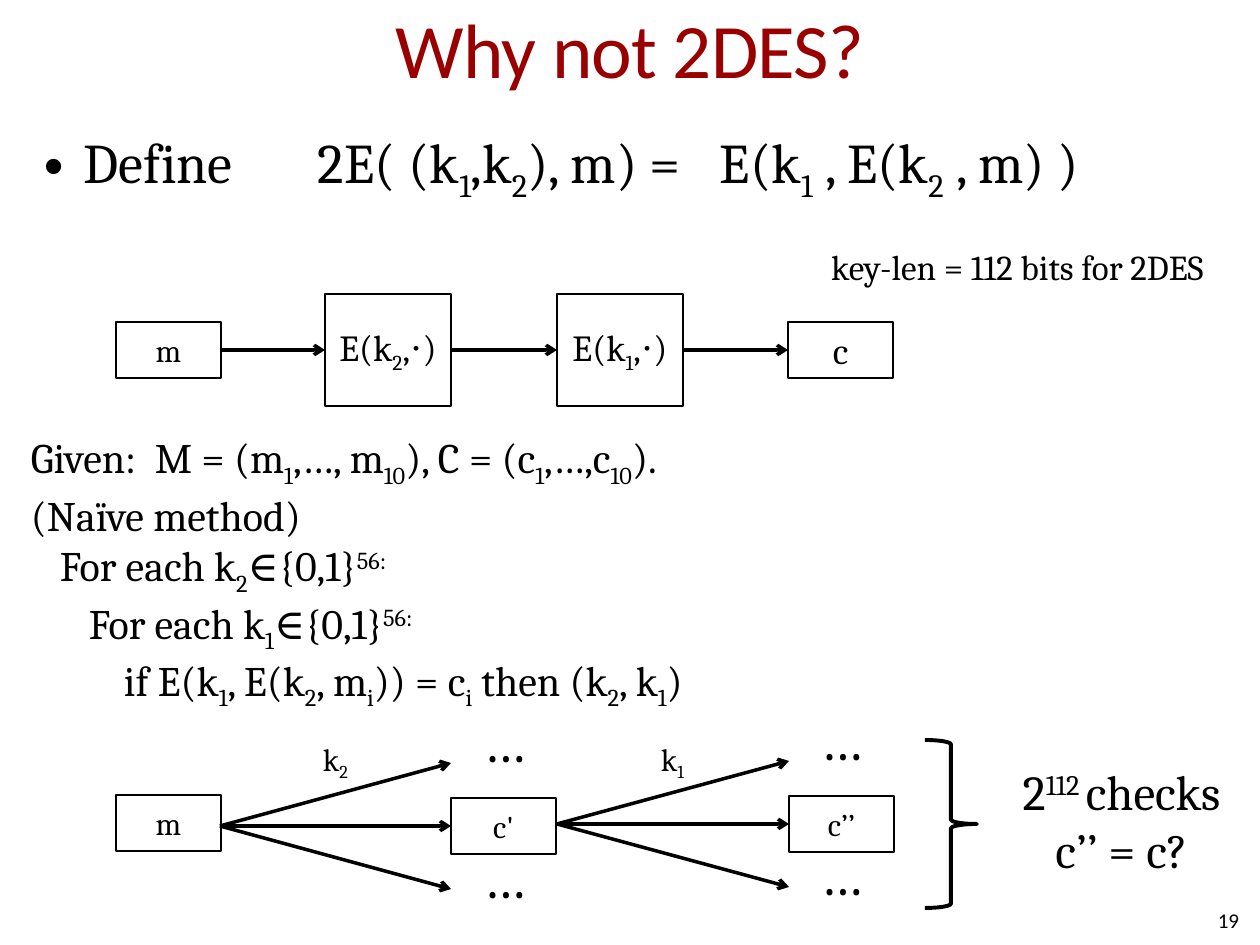
from lxml import etree
from pptx import Presentation
from pptx import util as u
from pptx.dml.color import RGBColor
from pptx.enum import shapes, text
from pptx.oxml.ns import qn

PX = 914400 / 126
BLACK = RGBColor(0x00, 0x00, 0x00)
WHITE = RGBColor(0xFF, 0xFF, 0xFF)
DARK_RED = RGBColor(0x99, 0x00, 0x00)
BASELINES = {"_": "-25000", "^": "30000"}
LEFT, CENTER, RIGHT = text.PP_ALIGN.LEFT, text.PP_ALIGN.CENTER, text.PP_ALIGN.RIGHT
TOP, MIDDLE = text.MSO_ANCHOR.TOP, text.MSO_ANCHOR.MIDDLE

prs = Presentation()
prs.slide_width, prs.slide_height = u.Inches(10), u.Inches(7.5)
s = prs.slides.add_slide(prs.slide_layouts[6])


def add_text(at, lines, size, align=LEFT, anchor=TOP, inset=(0, 0),
             font="Cambria", color=BLACK, boxed=False):
    """Write lines whose |-separated parts are subscript after _ and superscript after ^."""
    at = [round(v * PX) for v in at]
    if boxed:
        sp = s.shapes.add_shape(shapes.MSO_SHAPE.RECTANGLE, *at)
        sp.shadow.inherit = False
        sp.fill.solid()
        sp.fill.fore_color.rgb = WHITE
        sp.line.color.rgb = BLACK
        sp.line.width = u.Pt(0.75)
    else:
        sp = s.shapes.add_textbox(*at)
    tf = sp.text_frame
    tf.word_wrap = True
    tf.vertical_anchor = anchor
    tf.margin_left = tf.margin_right = round(inset[0] * PX)
    tf.margin_top = tf.margin_bottom = round(inset[1] * PX)
    for i, line in enumerate(lines):
        p = tf.paragraphs[0] if i == 0 else tf.add_paragraph()
        p.alignment = align
        for part in line.split("|"):
            r = p.add_run()
            r.text = part[1:] if part[0] in BASELINES else part
            r.font.name, r.font.size, r.font.color.rgb = font, u.Pt(size), color
            if part[0] in BASELINES:
                r.font._element.set("baseline", BASELINES[part[0]])
    return tf


def add_arrow(x1, y1, x2, y2):
    c = s.shapes.add_connector(shapes.MSO_CONNECTOR.STRAIGHT,
                               *[round(v * PX) for v in (x1, y1, x2, y2)])
    c.line.color.rgb = BLACK
    c.line.width = u.Pt(2)
    etree.SubElement(c.line._get_or_add_ln(), qn("a:tailEnd"), type="arrow")
    etree.SubElement(c._element.spPr, qn("a:effectLst"))


# Title and definition
tf = add_text((63, -31, 1134, 157), ["Why not 2DES?"], 44, CENTER, MIDDLE, (0, 6),
              "Calibri", DARK_RED)
tf.paragraphs[0].runs[0].font._element.set("spc", "-50")

tf = add_text((31, 122, 1197, 90),
              ["Define\t2E( (k|_1|,k|_2|), m) =\tE(k|_1| , E(k|_2| , m) )"],
              32, inset=(13, 6))
pPr = tf.paragraphs[0]._p.get_or_add_pPr()
pPr.set("marL", str(round(40 * PX)))
pPr.set("indent", str(round(-40 * PX)))
etree.SubElement(pPr, qn("a:buFont"), typeface="Arial")
etree.SubElement(pPr, qn("a:buChar"), char="•")
tabs = etree.SubElement(pPr, qn("a:tabLst"))
for stop in (274, 676):
    etree.SubElement(tabs, qn("a:tab"), pos=str(round(stop * PX)), algn="l")

add_text((818, 239, 437, 56), ["key-len = 112 bits for 2DES"], 20, inset=(13, 6))

# Double encryption chain
CHAIN_Y = 350
for x, w, h, label, size in [(116, 105, 56, "m", 18), (325, 126, 112, "E(k|_2|,⋅)", 21),
                             (557, 126, 112, "E(k|_1|,⋅)", 21), (788, 105, 56, "c", 21)]:
    add_text((x, CHAIN_Y - h / 2, w, h), [label], size, CENTER, MIDDLE, (13, 6), boxed=True)
for x1, x2 in [(220, 325), (451, 557), (683, 788)]:
    add_arrow(x1, CHAIN_Y, x2, CHAIN_Y)

# Naive search
tf = add_text((31, 432, 1071, 254), [
    "Given:\tM = (m|_1|,…, m|_10|), C = (c|_1|,…,c|_10|).",
    "(Naïve method)",
    "For each k|_2|∈{0,1}|^56:",
    "For each k|_1|∈{0,1}|^56:",
    "if E(k|_1|, E(k|_2|, m|_i|)) = c|_i| then (k|_2|, k|_1|)",
], 24)
for p, indent in zip(tf.paragraphs, (0, 0, 29, 58, 93)):
    p._p.get_or_add_pPr().set("marL", str(round(indent * PX)))
tabs = etree.SubElement(tf.paragraphs[0]._p.get_or_add_pPr(), qn("a:tabLst"))
etree.SubElement(tabs, qn("a:tab"), pos=str(round(124 * PX)), algn="l")

# Search tree
for x, y, label in [(116, 795, "m"), (451, 798, "c'"), (789, 796, "c’’")]:
    add_text((x, y, 105, 56), [label], 18, CENTER, MIDDLE, (13, 6), boxed=True)
for x1, x2, y, key, key_x in [(220, 451, 826, "k|_2", 283), (557, 789, 824, "k|_1", 620)]:
    for dy in (-63, 63, 0):
        add_arrow(x1, y, x2, y + dy)
    for dy in (-120, 16):
        add_text((x2 + 32, y + dy, 105, 68), ["…"], 32)
    add_text((key_x, 733, 105, 56), [key], 18, CENTER, MIDDLE, (13, 6))

brace = s.shapes.add_shape(shapes.MSO_SHAPE.RIGHT_BRACE,
                           *[round(v * PX) for v in (925, 740, 52, 168)])
brace.shadow.inherit = False
brace.fill.background()
brace.line.color.rgb = BLACK
brace.line.width = u.Pt(2.25)
add_text((998, 761, 247, 118), ["2|^112 |checks", "c’’ = c?"], 28, CENTER)

add_text((945, 895, 294, 50), ["19"], 12, RIGHT, MIDDLE, font="Calibri")

prs.save("out.pptx")
